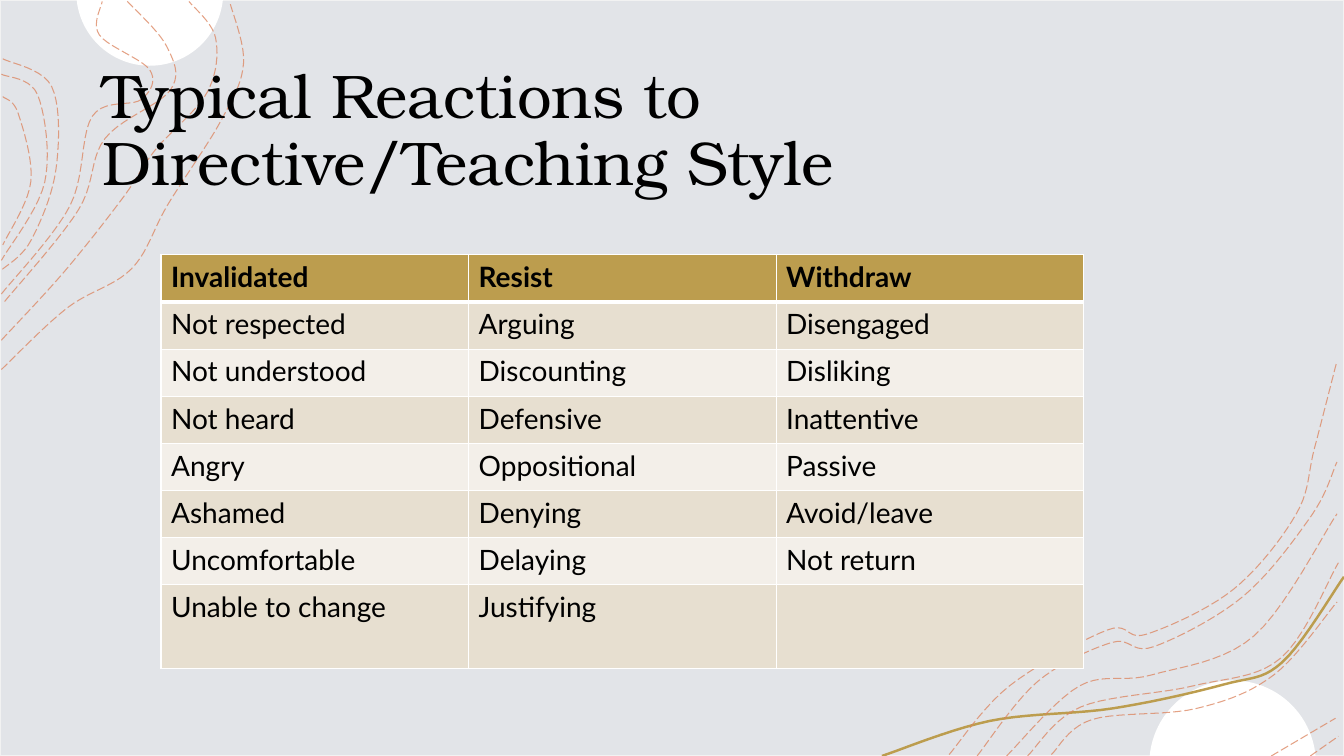
from math import asin, cos, pi, sin

from lxml.etree import SubElement
from pptx import Presentation
from pptx.dml.color import RGBColor
from pptx.enum.dml import MSO_LINE
from pptx.enum.shapes import MSO_SHAPE
from pptx.enum.text import MSO_ANCHOR, PP_ALIGN
from pptx.oxml.ns import qn
from pptx.util import Pt

TITLE = "Typical Reactions to Directive/Teaching Style"
REACTIONS = [
    ("Invalidated", "Resist", "Withdraw"),
    ("Not respected", "Arguing", "Disengaged"),
    ("Not understood", "Discounting", "Disliking"),
    ("Not heard", "Defensive", "Inattentive"),
    ("Angry", "Oppositional", "Passive"),
    ("Ashamed", "Denying", "Avoid/leave"),
    ("Uncomfortable", "Delaying", "Not return"),
    ("Unable to change", "Justifying", ""),
]
SLIDE_WIDTH, SLIDE_HEIGHT = 960, 540
COLUMN_WIDTH, ROW_HEIGHT, LAST_ROW_HEIGHT = 219.7, 33.7, 59.5
GOLD, CORAL, WHITE, BLACK = "BC9D4E", "DC835D", "FFFFFF", "000000"
BACKDROP, EDGE = "E2E4E8", "F2F2F2"
BANDS = ("F3EFE9", "E7DFD0")

MOON_INSET = 5.5
MOONS = [(107, -MOON_INSET, 52.5, 1), (880.5, SLIDE_HEIGHT + MOON_INSET, 59.5, -1)]
RIBBON = [(630, 540), (707, 515), (795, 506), (874, 489), (916, 473), (960, 412)]
CONTOURS = [
    [(1, 264), (48, 220), (94, 192), (120, 146), (158, 86), (174, 45), (164, 1)],
    [(1, 243), (46, 194), (88, 141), (111, 107), (148, 66), (154, 27), (135, 1)],
    [(91, 1), (119, 33), (122, 64), (75, 99), (56, 150), (2, 217)],
    [(1, 210), (50, 147), (66, 83), (101, 71), (107, 50), (71, 25), (73, 1)],
    [(2, 42), (37, 62), (40, 121), (22, 172), (1, 193)],
    [(1, 53), (27, 68), (32, 130), (1, 186)],
    [(2, 69), (13, 81), (22, 130), (2, 175)],
    [(678, 539), (721, 490), (791, 450), (819, 453), (881, 421), (926, 367),
     (939, 320), (955, 258)],
    [(698, 540), (741, 487), (794, 459), (824, 462), (888, 426), (937, 368), (955, 330)],
    [(936, 540), (956, 526)],
    [(908, 540), (954, 513)],
    [(751, 539), (780, 514), (855, 506), (910, 482), (955, 430)],
    [(734, 540), (772, 505), (852, 490), (915, 470), (956, 402)],
    [(719, 540), (771, 490), (823, 482), (896, 454), (955, 367)],
]


def rgb(code):
    return RGBColor.from_string(code)


def smooth_curve(anchors, steps=10):
    padded = [anchors[0], *anchors, anchors[-1]]
    curve = [anchors[0]]
    for a, b, c, d in zip(padded, padded[1:], padded[2:], padded[3:]):
        for step in range(1, steps + 1):
            t = step / steps
            curve.append(tuple(
                q + t * (r - p) / 2 + t**2 * (2 * p - 5 * q + 4 * r - s) / 2
                + t**3 * (3 * q - p - 3 * r + s) / 2
                for p, q, r, s in zip(a, b, c, d)
            ))
    return curve


def moon_outline(x, y, radius, side, steps=48):
    start = asin(MOON_INSET / radius)
    angles = [start + (pi - 2 * start) * i / steps for i in range(steps + 1)]
    return [(x + radius * cos(a), y + side * radius * sin(a)) for a in angles]


def draw_outline(slide, points, closed=False):
    corners = [(Pt(x), Pt(y)) for x, y in points]
    builder = slide.shapes.build_freeform(*corners[0])
    builder.add_line_segments(corners[1:], close=closed)
    outline = builder.convert_to_shape()
    outline.shadow.inherit = False
    return outline


def draw_line(slide, anchors, color, width):
    curve = draw_outline(slide, smooth_curve(anchors))
    curve.fill.background()
    curve.line.color.rgb = rgb(color)
    curve.line.width = Pt(width)
    return curve


def add_backdrop(slide):
    panel = slide.shapes.add_shape(
        MSO_SHAPE.RECTANGLE, 0, 0, Pt(SLIDE_WIDTH), Pt(SLIDE_HEIGHT))
    panel.shadow.inherit = False
    panel.fill.solid()
    panel.fill.fore_color.rgb = rgb(BACKDROP)
    panel.line.color.rgb = rgb(EDGE)
    panel.line.width = Pt(1)
    for moon in MOONS:
        disc = draw_outline(slide, moon_outline(*moon), closed=True)
        disc.fill.solid()
        disc.fill.fore_color.rgb = rgb(WHITE)
        disc.line.fill.background()
    draw_line(slide, RIBBON, GOLD, 1.75)
    for anchors in CONTOURS:
        contour = draw_line(slide, anchors, CORAL, 0.75)
        contour.line.dash_style = MSO_LINE.LONG_DASH
        tint = contour.element.spPr.find(qn("a:ln")).find(".//" + qn("a:srgbClr"))
        SubElement(tint, qn("a:alpha"), val="75000")


def add_title(slide):
    title = slide.shapes.title
    title.left, title.top, title.width, title.height = map(Pt, (66, 28.75, 828, 131))
    title.text_frame.text = TITLE
    title.text_frame.word_wrap = True
    title.text_frame.vertical_anchor = MSO_ANCHOR.MIDDLE
    heading = title.text_frame.paragraphs[0]
    heading.alignment = PP_ALIGN.LEFT
    heading.line_spacing = 0.9
    heading.font.name, heading.font.size = "TeX Gyre Bonum", Pt(44)
    heading.font.color.rgb = rgb(BLACK)
    title.element.getparent().append(title.element)


def add_borders(cell, is_header):
    properties = cell._tc.get_or_add_tcPr()
    for side in "LRTB":
        width = 3 if is_header and side == "B" else 1
        border = SubElement(properties, qn("a:ln" + side), w=str(Pt(width)))
        SubElement(SubElement(border, qn("a:solidFill")), qn("a:srgbClr"), val=WHITE)


def add_reactions(slide):
    heights = [ROW_HEIGHT] * (len(REACTIONS) - 1) + [LAST_ROW_HEIGHT]
    columns = len(REACTIONS[0])
    table = slide.shapes.add_table(
        len(REACTIONS), columns, Pt(115), Pt(182),
        Pt(COLUMN_WIDTH * columns), Pt(sum(heights))).table
    for column in table.columns:
        column.width = Pt(COLUMN_WIDTH)
    for r, (reactions, height) in enumerate(zip(REACTIONS, heights)):
        table.rows[r].height = Pt(height)
        for c, reaction in enumerate(reactions):
            cell = table.cell(r, c)
            add_borders(cell, r == 0)
            cell.fill.solid()
            cell.fill.fore_color.rgb = rgb(BANDS[r % 2] if r else GOLD)
            cell.text = reaction
            font = cell.text_frame.paragraphs[0].font
            font.name, font.size, font.bold = "Lato", Pt(20), r == 0
            font.color.rgb = rgb(BLACK)


def main():
    deck = Presentation()
    deck.slide_width, deck.slide_height = Pt(SLIDE_WIDTH), Pt(SLIDE_HEIGHT)
    slide = deck.slides.add_slide(deck.slide_layouts[5])
    add_backdrop(slide)
    add_title(slide)
    add_reactions(slide)
    deck.save("out.pptx")


if __name__ == "__main__":
    main()
